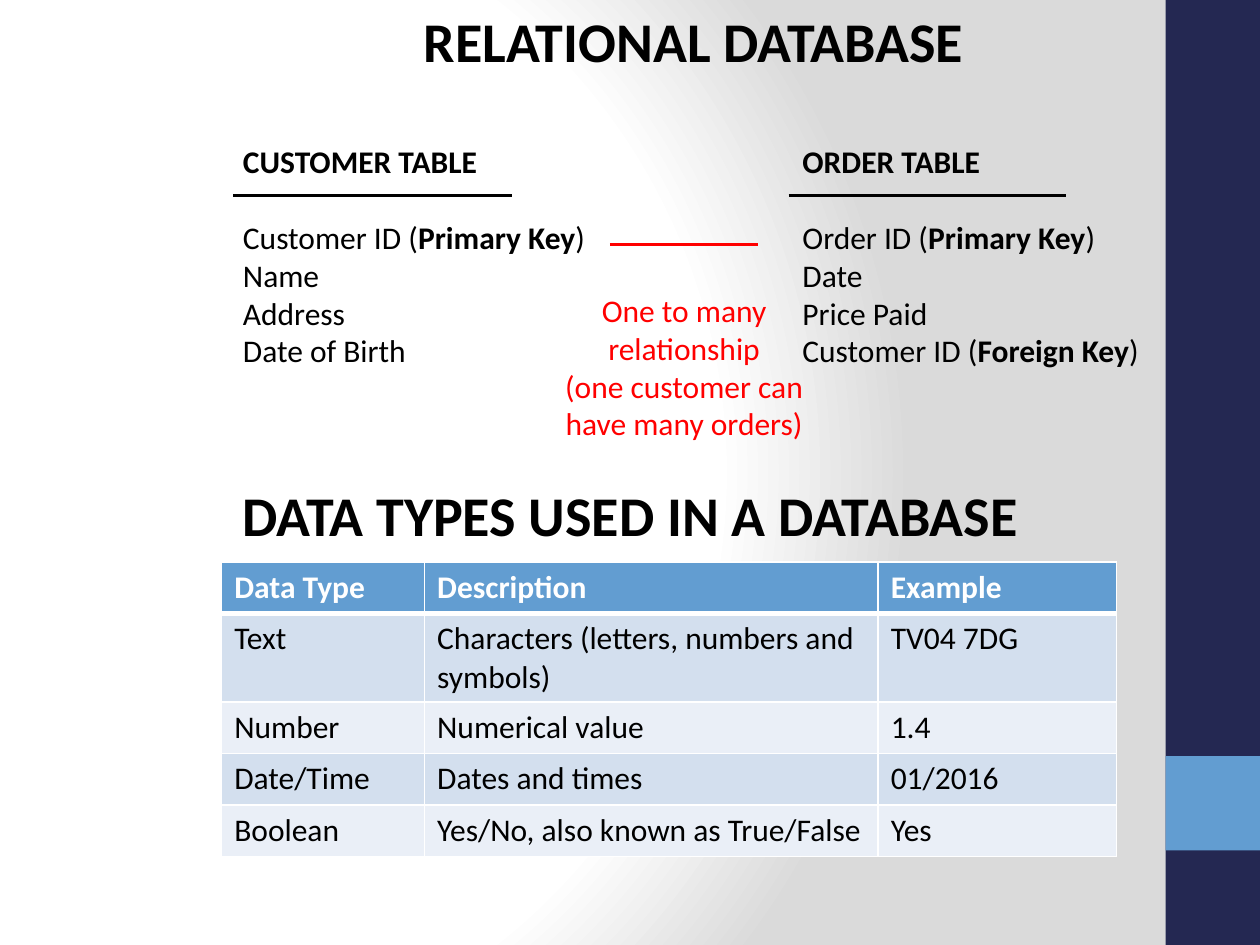
from pptx import Presentation
from pptx.dml.color import RGBColor
from pptx.enum.shapes import MSO_CONNECTOR, MSO_SHAPE
from pptx.enum.text import PP_ALIGN
from pptx.oxml import parse_xml
from pptx.oxml.ns import nsdecls
from pptx.util import Inches, Pt

FONT = "Calibri"
BLACK, WHITE, RED, NAVY, BLUE = "000000", "FFFFFF", "FF0000", "242852", "629DD1"
BANDS = ["D3DFEE", "EAEFF7"]

HEADING = {"size": Pt(32), "bold": True}
COLUMN_TABS = [1, 5.44]
# Each paragraph: runs as (text, bold), font format, paragraph format
MAIN_TEXT = [
    ([("RELATIONAL DATABASE", True)], HEADING,
     {"alignment": PP_ALIGN.CENTER, "space_after": Pt(39)}),
    ([("\tCUSTOMER TABLE\tORDER TABLE", True)], {}, {"space_after": Pt(22)}),
    ([("\tCustomer ID (", False), ("Primary Key", True), (")\tOrder ID (", False),
      ("Primary Key", True), (")", False)], {}, {}),
    ([("\tName\tDate", False)], {}, {}),
    ([("\tAddress\tPrice Paid", False)], {}, {}),
    ([("\tDate of Birth\tCustomer ID (", False), ("Foreign Key", True), (")", False)], {}, {}),
    ([("DATA TYPES USED IN A DATABASE", True)], HEADING,
     {"alignment": PP_ALIGN.CENTER, "space_before": Pt(63.5)}),
]
RELATIONSHIP = [
    ([(text, False)], {"color": RED}, {"alignment": PP_ALIGN.CENTER})
    for text in ("One to many relationship", "(one customer can have many orders)")
]
RULES = [(1.85, 4.06, 1.55, BLACK), (6.26, 8.46, 1.55, BLACK), (4.84, 6.02, 1.94, RED)]
SIDEBAR = [(0, 7.5, NAVY), (6, 0.75, BLUE)]

DATA_TYPES = [
    ("Data Type", "Description", "Example"),
    ("Text", "Characters (letters, numbers and symbols)", "TV04 7DG"),
    ("Number", "Numerical value", "1.4"),
    ("Date/Time", "Dates and times", "01/2016"),
    ("Boolean", "Yes/No, also known as True/False", "Yes"),
]
COLUMN_WIDTHS = [1.61, 3.6, 1.89]
ROW_HEIGHTS = [0.41, 0.68, 0.41, 0.41, 0.41]


def rgb(value):
    return RGBColor.from_string(value)


def apply(target, values):
    for name, value in values.items():
        setattr(target, name, value)


def style_font(font, color=BLACK, **values):
    apply(font, {"name": FONT, "size": Pt(18), **values})
    font.color.rgb = rgb(color)


def add_text(page, place, content):
    box = page.shapes.add_textbox(*map(Inches, place))
    box.text_frame.word_wrap = True
    for index, (runs, font, layout) in enumerate(content):
        para = box.text_frame.paragraphs[0] if index == 0 else box.text_frame.add_paragraph()
        apply(para, layout)
        for text, bold in runs:
            span = para.add_run()
            span.text = text
            style_font(span.font, **{"bold": bold, **font})
    return box


def set_tabs(para, stops):
    tabs = "".join(f'<a:tab pos="{Inches(stop)}" algn="l"/>' for stop in stops)
    para._p.get_or_add_pPr().append(
        parse_xml(f"<a:tabLst {nsdecls('a')}>{tabs}</a:tabLst>"))


def set_background(page):
    stops = "".join(f'<a:gs pos="{position * 1000}"><a:srgbClr val="{color}"/></a:gs>'
                    for position, color in [(0, WHITE), (75, WHITE), (100, "DADADA")])
    page._element.cSld.insert(0, parse_xml(
        f"<p:bg {nsdecls('p', 'a')}><p:bgPr><a:gradFill rotWithShape='1'>"
        f"<a:gsLst>{stops}</a:gsLst><a:path path='circle'>"
        "<a:fillToRect l='20000' t='50000' r='100000' b='50000'/></a:path>"
        "</a:gradFill><a:effectLst/></p:bgPr></p:bg>"))


def add_rule(page, left, right, y, color):
    line = page.shapes.add_connector(
        MSO_CONNECTOR.STRAIGHT, *map(Inches, (left, y, right, y)))
    line.line.color.rgb = rgb(color)
    line.line.width = Pt(1.5)
    line._element.spPr.append(parse_xml(f"<a:effectLst {nsdecls('a')}/>"))


def set_borders(cell, top, bottom):
    for side, width in (("L", 1), ("R", 1), ("T", top), ("B", bottom)):
        cell._tc.get_or_add_tcPr().append(parse_xml(
            f'<a:ln{side} {nsdecls("a")} w="{Pt(width)}"><a:solidFill>'
            f'<a:srgbClr val="{WHITE}"/></a:solidFill></a:ln{side}>'))


def add_data_types(page):
    table = page.shapes.add_table(
        len(DATA_TYPES), len(COLUMN_WIDTHS), Inches(1.76), Inches(4.46),
        Inches(sum(COLUMN_WIDTHS)), Inches(sum(ROW_HEIGHTS))).table
    for column, width in zip(table.columns, COLUMN_WIDTHS):
        column.width = Inches(width)
    for index, (row, height, texts) in enumerate(zip(table.rows, ROW_HEIGHTS, DATA_TYPES)):
        row.height = Inches(height)
        header = index == 0
        for cell, text in zip(row.cells, texts):
            set_borders(cell, 3 if index == 1 else 1, 3 if header else 1)
            cell.fill.solid()
            cell.fill.fore_color.rgb = rgb(BLUE if header else BANDS[(index - 1) % 2])
            span = cell.text_frame.paragraphs[0].add_run()
            span.text = text
            style_font(span.font, WHITE if header else BLACK, bold=header)


def main():
    deck = Presentation()
    deck.slide_width, deck.slide_height = Inches(10), Inches(7.5)
    page = deck.slides.add_slide(deck.slide_layouts[6])
    set_background(page)
    for top, height, color in SIDEBAR:
        bar = page.shapes.add_shape(
            MSO_SHAPE.RECTANGLE, *map(Inches, (9.25, top, 0.75, height)))
        bar.shadow.inherit = False
        bar.fill.solid()
        bar.fill.fore_color.rgb = rgb(color)
        bar.line.fill.background()
    main_box = add_text(page, (0.83, 0, 8.35, 5.82), MAIN_TEXT)
    title, *rows, _ = main_box.text_frame.paragraphs
    title._p.get_or_add_pPr().set("marL", str(Inches(1)))
    for para in rows:
        set_tabs(para, COLUMN_TABS)
    for rule in RULES:
        add_rule(page, *rule)
    add_text(page, (4.13, 2.26, 2.6, 1.31), RELATIONSHIP)
    add_data_types(page)
    deck.save("out.pptx")


if __name__ == "__main__":
    main()
